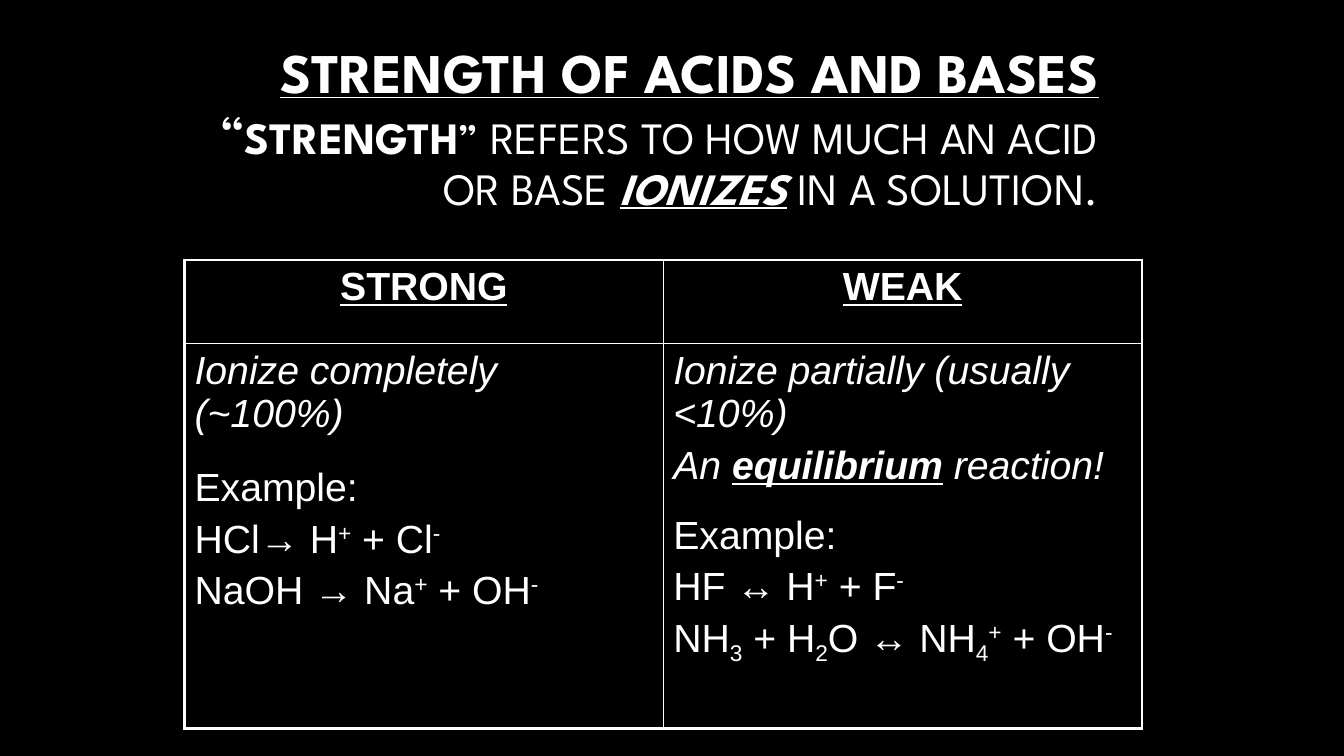
from dataclasses import dataclass

from lxml import etree
from pptx import Presentation
from pptx.dml.color import RGBColor
from pptx.enum.text import MSO_ANCHOR, PP_ALIGN
from pptx.oxml.ns import qn
from pptx.util import Cm, Pt

BLACK = RGBColor(0x00, 0x00, 0x00)
WHITE = RGBColor(0xFF, 0xFF, 0xFF)
LEFT, CENTER, RIGHT = PP_ALIGN.LEFT, PP_ALIGN.CENTER, PP_ALIGN.RIGHT
MIDDLE = MSO_ANCHOR.MIDDLE
TITLE_FONT, TABLE_FONT = "League Spartan", "Arial"
OUTER, INNER = Pt(2.25), Pt(1)
SUPER, SUB = 30, -25
LINE_GAP = 5.6


@dataclass(frozen=True)
class Run:
    text: str
    bold: bool = False
    italic: bool = False
    underline: bool = False
    size: float = 28
    baseline: int = 0


@dataclass(frozen=True)
class Para:
    runs: tuple[Run, ...]
    before: float = LINE_GAP
    align: PP_ALIGN = LEFT


def add_run(p, run: Run, font: str) -> None:
    r = p.add_run()
    r.text = run.text
    r.font.name = font
    r.font.size = Pt(run.size)
    r.font.bold = run.bold
    r.font.italic = run.italic
    r.font.underline = run.underline
    r.font.color.rgb = WHITE
    if run.baseline:
        r.font._element.set("baseline", str(run.baseline * 1000))


def fill_text(tf, paras: list[Para], font: str) -> None:
    for i, para in enumerate(paras):
        p = tf.paragraphs[0] if i == 0 else tf.add_paragraph()
        p.alignment = para.align
        p.space_before = Pt(para.before if i else 0)
        for run in para.runs:
            add_run(p, run, font)


def set_border(cell, side: str, width: int) -> None:
    ln = etree.SubElement(cell._tc.get_or_add_tcPr(), qn(f"a:ln{side}"), w=str(width))
    fill = etree.SubElement(ln, qn("a:solidFill"))
    etree.SubElement(fill, qn("a:srgbClr"), val=str(WHITE))


def formula(*parts: str) -> Para:
    """A leading ^ raises a part, a leading _ lowers it."""
    shift = {"^": SUPER, "_": SUB}
    return Para(tuple(
        Run(part[1:], baseline=shift[part[0]]) if part[0] in shift else Run(part)
        for part in parts))


def heading(text: str) -> list[Para]:
    return [Para((Run(text, bold=True, underline=True),), align=CENTER)]


def example(before: float) -> Para:
    return Para((Run("Example:"),), before)


TITLE = Run("STRENGTH OF ACIDS AND BASES", bold=True, underline=True, size=40)
DEFINITION = (
    Run("“", size=40),
    Run("STRENGTH", bold=True, size=32),
    Run("” REFERS TO HOW MUCH AN ACID OR BASE ", size=32),
    Run("IONIZES", bold=True, italic=True, underline=True, size=32),
    Run(" IN A SOLUTION.", size=32),
)
STRONG = [
    Para((Run("Ionize completely (~100%)", italic=True),)),
    example(21.5),
    formula("HCl→ H", "^+", " + Cl", "^-"),
    formula("NaOH → Na", "^+", " + OH", "^-"),
]
WEAK = [
    Para((Run("Ionize partially (usually <10%)", italic=True),)),
    Para((Run("An ", italic=True),
          Run("equilibrium", bold=True, italic=True, underline=True),
          Run(" reaction!", italic=True))),
    example(18.5),
    formula("HF ↔ H", "^+", " + F", "^-"),
    formula("NH", "_3", " + H", "_2", "O ↔ NH", "_4", "^+", " + OH", "^-"),
]
CELLS = [[heading("STRONG"), heading("WEAK")], [STRONG, WEAK]]


def add_title(s) -> None:
    tf = s.shapes.add_textbox(Cm(5.08), Cm(0.64), Cm(22.86), Cm(5.28)).text_frame
    tf.word_wrap = True
    tf.vertical_anchor = MIDDLE
    p = tf.paragraphs[0]
    p.alignment = RIGHT
    p.line_spacing = 0.9
    add_run(p, TITLE, TITLE_FONT)
    p.add_line_break()
    for run in DEFINITION:
        add_run(p, run, TITLE_FONT)


def add_comparison(s) -> None:
    rows, cols = len(CELLS), len(CELLS[0])
    table = s.shapes.add_table(
        rows, cols, Cm(4.65), Cm(6.55), Cm(24.13), Cm(11.81)).table
    table.first_row = table.horz_banding = False
    for row, height in zip(table.rows, (Cm(2.11), Cm(9.7))):
        row.height = height
    for i, row_cells in enumerate(CELLS):
        for j, paras in enumerate(row_cells):
            cell = table.cell(i, j)
            fill_text(cell.text_frame, paras, TABLE_FONT)
            # Thick outer frame, thin inner lines
            edges = {"L": j == 0, "R": j == cols - 1, "T": i == 0, "B": i == rows - 1}
            for side, is_outer in edges.items():
                set_border(cell, side, OUTER if is_outer else INNER)
            cell.fill.solid()
            cell.fill.fore_color.rgb = BLACK


def main() -> None:
    prs = Presentation()
    prs.slide_width, prs.slide_height = Cm(33.87), Cm(19.05)
    s = prs.slides.add_slide(prs.slide_layouts[6])
    s.background.fill.solid()
    s.background.fill.fore_color.rgb = BLACK
    add_title(s)
    add_comparison(s)
    prs.save("out.pptx")


if __name__ == "__main__":
    main()
